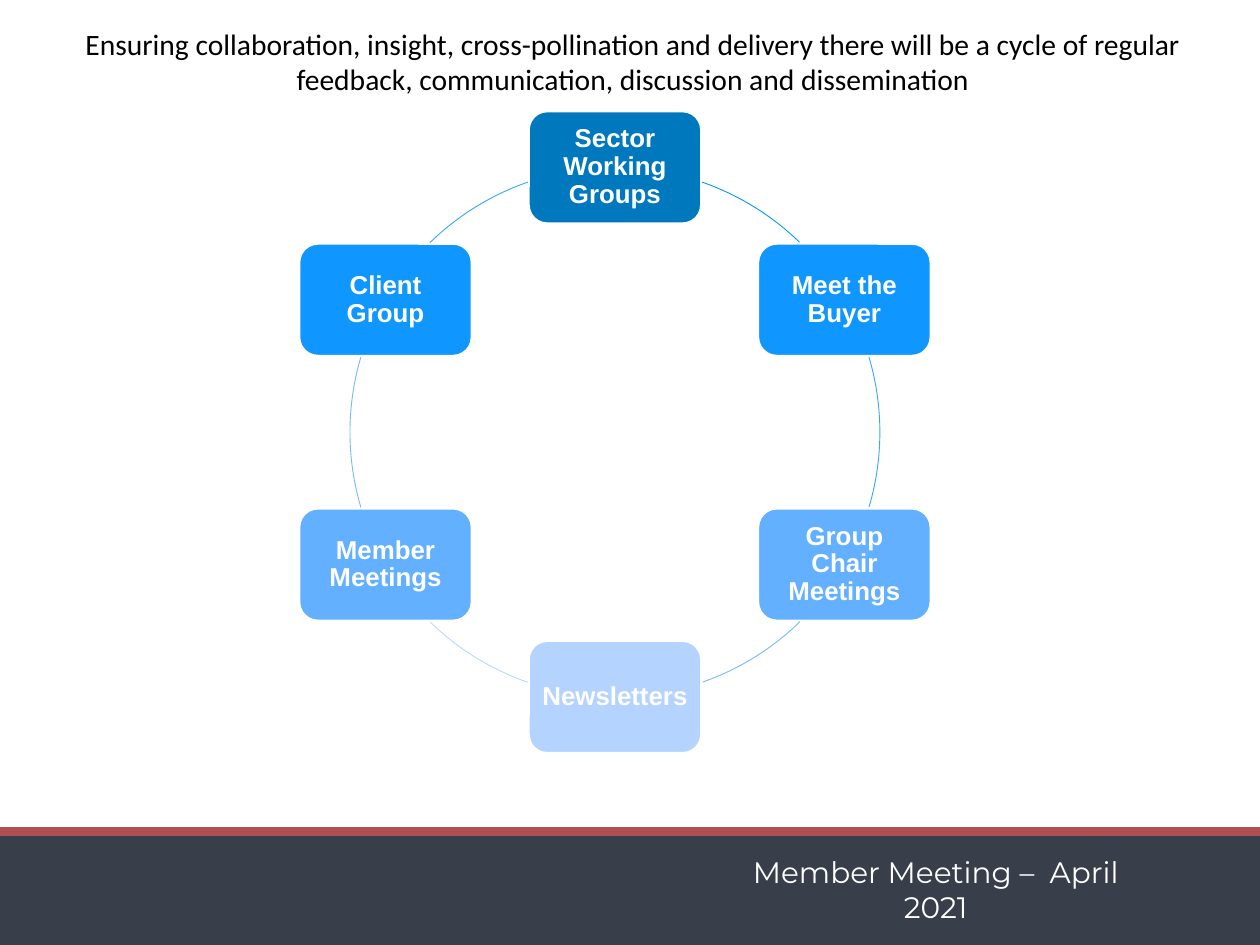
from math import cos, radians, sin

from lxml.etree import SubElement
from pptx import Presentation
from pptx.dml.color import RGBColor
from pptx.enum.shapes import MSO_CONNECTOR, MSO_SHAPE
from pptx.enum.text import MSO_ANCHOR, MSO_AUTO_SIZE, PP_ALIGN
from pptx.oxml.ns import qn
from pptx.util import Inches, Pt

HEADING = ("Ensuring collaboration, insight, cross-pollination and delivery there will be "
           "a cycle of regular feedback, communication, discussion and dissemination")
FOOTER = "Member Meeting –  April 2021"

COLOURS = {
    "white": "FFFFFF", "black": "000000", "band": "383F4A", "stripe": "B04F51",
    "deep": "0078BD", "strong": "1097FF", "medium": "62B0FF", "pale": "B4D4FF",
    "arc deep": "009BF4", "arc strong": "37A7FF",
    "arc medium": "79BAFF", "arc pale": "BCD7FF",
}

# Clockwise from the top: label, box colour, then the arc that follows the box:
# its colour and its start and end in degrees clockwise from three o'clock.
STAGES = [
    ("Sector Working Groups", "deep", "arc deep", 289.2, 314.3),
    ("Meet the Buyer", "strong", "arc strong", 343.5, 16.5),
    ("Group Chair Meetings", "medium", "arc medium", 45.7, 70.8),
    ("Newsletters", "pale", "arc pale", 109.2, 134.3),
    ("Member Meetings", "medium", "arc medium", 163.5, 196.5),
    ("Client Group", "strong", "arc strong", 225.7, 250.8),
]

SLIDE_WIDTH, SLIDE_HEIGHT = 14.22, 10.67
BAND_TOP, STRIPE_Y = 9.34, 9.39
CENTRE_X, CENTRE_Y, RADIUS = 6.94, 4.88, 2.99
BOX_WIDTH, BOX_HEIGHT = 1.95, 1.27
ARC_UNITS_PER_DEGREE = 0.6  # an adjustment of 1.0 is 100000 units of 1/60000 degree


def colour(name):
    return RGBColor.from_string(COLOURS[name])


def write(shape, text, *, size, font, color, bold=False, inset=0.06,
          anchor=MSO_ANCHOR.MIDDLE, line_spacing=1.0):
    frame = shape.text_frame
    frame.text = text
    frame.word_wrap = True
    frame.auto_size = MSO_AUTO_SIZE.NONE
    frame.vertical_anchor = anchor
    frame.margin_left = frame.margin_right = Inches(inset)
    frame.margin_top = frame.margin_bottom = Inches(inset)
    paragraph = frame.paragraphs[0]
    paragraph.alignment = PP_ALIGN.CENTER
    paragraph.line_spacing = line_spacing
    paragraph.space_before = Pt(0)
    run_font = paragraph.runs[0].font
    run_font.size, run_font.name, run_font.bold = Pt(size), font, bold
    run_font.color.rgb = colour(color)


def place(shape, left, top, width, height):
    shape.left, shape.top = Inches(left), Inches(top)
    shape.width, shape.height = Inches(width), Inches(height)


def bring_to_front(shape):
    shape.element.getparent().append(shape.element)


def add_shape(slide, kind, left, top, width, height, fill=None, line=None, line_width=1):
    shape = slide.shapes.add_shape(kind, Inches(left), Inches(top),
                                   Inches(width), Inches(height))
    shape.shadow.inherit = False
    if fill:
        shape.fill.solid()
        shape.fill.fore_color.rgb = colour(fill)
    else:
        shape.fill.background()
    if line:
        shape.line.color.rgb = colour(line)
        shape.line.width = Pt(line_width)
    else:
        shape.line.fill.background()
    return shape


def add_footer(slide, body):
    add_shape(slide, MSO_SHAPE.RECTANGLE, 0, BAND_TOP,
              SLIDE_WIDTH, SLIDE_HEIGHT - BAND_TOP, fill="band")
    stripe = slide.shapes.add_connector(MSO_CONNECTOR.STRAIGHT, 0, Inches(STRIPE_Y),
                                        Inches(SLIDE_WIDTH), Inches(STRIPE_Y))
    stripe.line.color.rgb = colour("stripe")
    stripe.line.width = Pt(7)
    SubElement(stripe.element.spPr, qn("a:effectLst"))

    place(body, 8.25, 9.78, 4.62, 0.52)
    write(body, FOOTER, size=24, font="Montserrat", color="white")
    properties = body.text_frame.paragraphs[0].runs[0].font
    paragraph_properties = body.element.find(".//" + qn("a:pPr"))
    paragraph_properties.set("marL", "0")
    paragraph_properties.set("indent", "0")
    SubElement(paragraph_properties, qn("a:buNone"))
    bring_to_front(body)


def add_cycle(slide):
    for index, (label, fill, arc_colour, start, end) in enumerate(STAGES):
        angle = radians(-90 + index * 360 / len(STAGES))
        box = add_shape(slide, MSO_SHAPE.ROUNDED_RECTANGLE,
                        CENTRE_X + RADIUS * cos(angle) - BOX_WIDTH / 2,
                        CENTRE_Y + RADIUS * sin(angle) - BOX_HEIGHT / 2,
                        BOX_WIDTH, BOX_HEIGHT, fill=fill, line="white", line_width=2)
        write(box, label, size=21, font="Arial", color="white", bold=True,
              inset=0.08, line_spacing=0.9)
        arc = add_shape(slide, MSO_SHAPE.ARC, CENTRE_X - RADIUS, CENTRE_Y - RADIUS,
                        2 * RADIUS, 2 * RADIUS, line=arc_colour, line_width=0.75)
        arc.adjustments[0] = start * ARC_UNITS_PER_DEGREE
        arc.adjustments[1] = end * ARC_UNITS_PER_DEGREE


def main():
    presentation = Presentation()
    presentation.slide_width = Inches(SLIDE_WIDTH)
    presentation.slide_height = Inches(SLIDE_HEIGHT)
    slide = presentation.slides.add_slide(presentation.slide_layouts[1])
    title, body = slide.shapes.title, slide.placeholders[1]

    add_footer(slide, body)
    add_cycle(slide)
    place(title, 0.55, 0.23, 13.18, 0.95)
    write(title, HEADING, size=24, font="Calibri", color="black", anchor=MSO_ANCHOR.TOP)
    bring_to_front(title)
    presentation.save("out.pptx")


if __name__ == "__main__":
    main()
